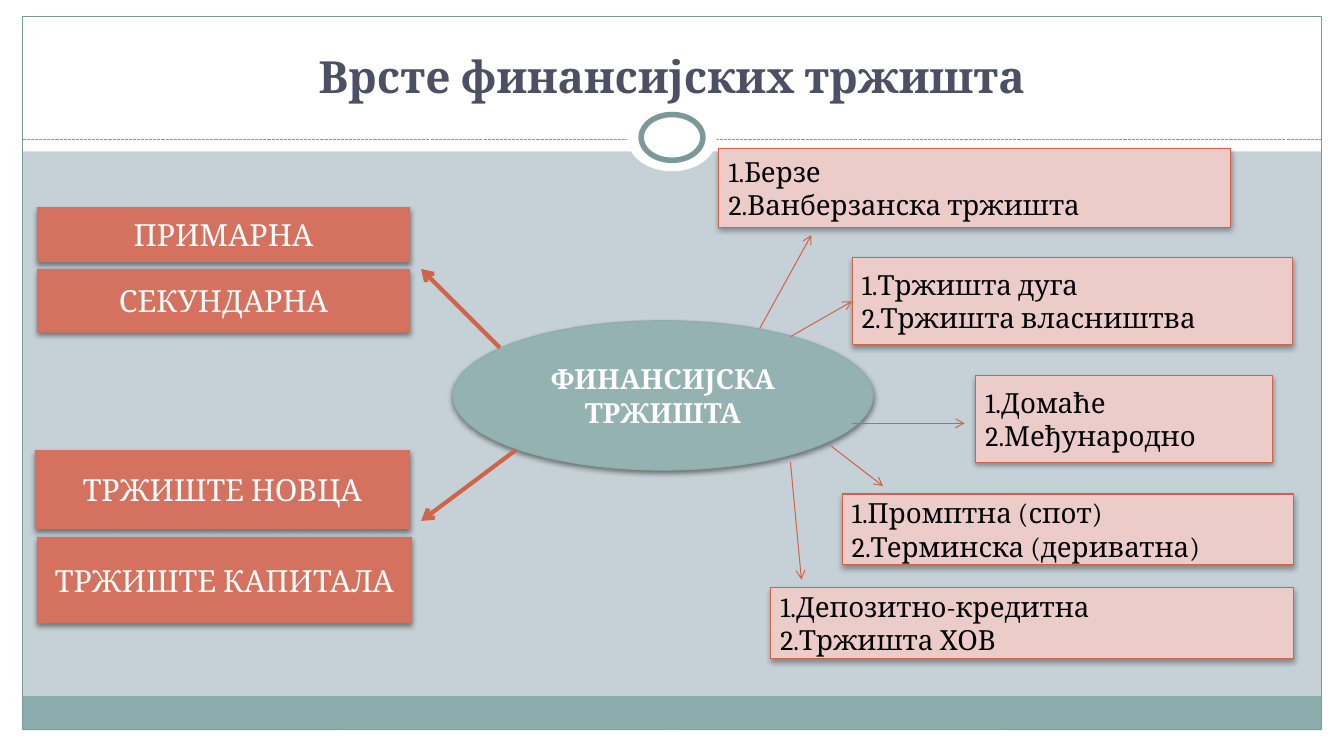
from lxml import etree
from pptx import Presentation
from pptx.dml.color import RGBColor
from pptx.enum.dml import MSO_LINE
from pptx.enum.shapes import MSO_CONNECTOR, MSO_SHAPE
from pptx.enum.text import MSO_ANCHOR, PP_ALIGN
from pptx.oxml.ns import qn
from pptx.util import Emu, Pt

PX = 9144
WIDTH, HEIGHT = 1350, 750
FONT = "Cambria"
RECTANGLE, OVAL = MSO_SHAPE.RECTANGLE, MSO_SHAPE.OVAL
STRAIGHT = MSO_CONNECTOR.STRAIGHT
SYSTEM_DASH = MSO_LINE.SQUARE_DOT
MIDDLE, BOTTOM = MSO_ANCHOR.MIDDLE, MSO_ANCHOR.BOTTOM
LEFT, CENTER = PP_ALIGN.LEFT, PP_ALIGN.CENTER
LEFT_SIDE = 1

BACKGROUND = RGBColor(0xC5, 0xD1, 0xD7)
WHITE = RGBColor(0xFF, 0xFF, 0xFF)
BLACK = RGBColor(0x00, 0x00, 0x00)
FOOTER = RGBColor(0x8C, 0xAD, 0xAE)
FRAME = RGBColor(0x7C, 0x99, 0x9A)
TITLE = RGBColor(0x4B, 0x50, 0x64)
TEAL = RGBColor(0x95, 0xB2, 0xB3)
CORAL = RGBColor(0xD4, 0x72, 0x5F)
PINK = RGBColor(0xEC, 0xCC, 0xC9)
ORANGE = RGBColor(0xD1, 0x63, 0x49)

TITLE_BOX = (45, 25, 1260, 83)
CENTER_BOX = (455, 322, 422, 150)
CATEGORIES = [
    ("ПРИМАРНА", (37, 208, 375, 55)),
    ("СЕКУНДАРНА", (37, 270, 375, 64)),
    ("ТРЖИШТЕ НОВЦА", (35, 452, 377, 79)),
    ("ТРЖИШТЕ КАПИТАЛА", (37, 539, 377, 87)),
]
LISTS = [
    ("Берзе\nВанберзанска тржишта", (722, 149, 514, 79)),
    ("Тржишта дуга\nТржишта власништва", (856, 259, 442, 87)),
    ("Домаће\nМеђународно", (980, 377, 298, 87)),
    ("Промптна (спот)\nТерминска (дериватна)", (846, 496, 453, 71)),
    ("Депозитно-кредитна\nТржишта ХОВ", (774, 590, 525, 71)),
]
CATEGORY_ARROWS = [(502, 349, 423, 270), (518, 452, 423, 523)]
LIST_ARROWS = [
    (763, 330, 815, 236),
    (794, 338, 856, 303),
    (856, 425, 969, 425),
    (835, 448, 887, 488),
    (794, 464, 805, 582),
]


def scale(lengths):
    return [Emu(length * PX) for length in lengths]


def add_block(slide, kind, box, fill=None, line=None, weight=0.75, shadow=0):
    shape = slide.shapes.add_shape(kind, *scale(box))
    if fill is None:
        shape.fill.background()
    else:
        shape.fill.solid()
        shape.fill.fore_color.rgb = fill
    if line is None:
        shape.line.fill.background()
    else:
        shape.line.color.rgb = line
        shape.line.width = Pt(weight)
    shape.shadow.inherit = False
    if shadow:
        effects = shape.element.spPr.find(qn("a:effectLst"))
        outer = etree.SubElement(
            effects, qn("a:outerShdw"), blurRad=str(Pt(4)), dist=str(Pt(2)),
            dir="5400000", rotWithShape="0")
        color = etree.SubElement(outer, qn("a:srgbClr"), val="000000")
        etree.SubElement(color, qn("a:alpha"), val=str(shadow * 1000))
    return shape


def write_text(shape, text, size, color, bold=False, align=CENTER, anchor=MIDDLE):
    frame = shape.text_frame
    frame.text = text
    frame.word_wrap = True
    frame.vertical_anchor = anchor
    for paragraph in frame.paragraphs:
        paragraph.alignment = align
        font = paragraph.runs[0].font
        font.name = FONT
        font.size = Pt(size)
        font.bold = bold
        font.color.rgb = color


def add_line(slide, ends, color, weight=0.75, arrow=False):
    line = slide.shapes.add_connector(STRAIGHT, *scale(ends))
    line.line.color.rgb = color
    line.line.width = Pt(weight)
    if arrow:
        etree.SubElement(line.get_or_add_ln(), qn("a:tailEnd"), type="arrow")
    etree.SubElement(line.element.spPr, qn("a:effectLst"))
    return line


def draw_frame(slide, box):
    left, top, width, height = box
    slide.background.fill.solid()
    slide.background.fill.fore_color.rgb = BACKGROUND
    margins = [
        (left, top + height - 17, width, 17),
        (left, top, width, 152),
        (left, top, 23, height),
        (left + width - 23, top, 23, height),
    ]
    for margin in margins:
        add_block(slide, RECTANGLE, margin, WHITE)
    inner = width - 46
    add_block(slide, RECTANGLE, (left + 23, top + 699, inner, 34), FOOTER)
    add_block(slide, RECTANGLE, (left + 23, top + 17, inner, height - 34), line=FRAME)
    divider = add_line(slide, (left + 23, top + 140, left + 23 + inner, top + 140), FRAME)
    divider.line.dash_style = SYSTEM_DASH
    middle = left + width // 2
    add_block(slide, OVAL, (middle - 45, top + 105, 90, 67), WHITE)
    add_block(slide, OVAL, (middle - 31, top + 115, 62, 46), WHITE, FRAME, 4)


def draw_title(slide, box):
    title = slide.shapes.title
    title.left, title.top, title.width, title.height = scale(box)
    write_text(title, "Врсте финансијских тржишта", 32, TITLE, True, anchor=BOTTOM)
    title.element.getparent().append(title.element)


def draw_center(slide, box):
    ellipse = add_block(slide, OVAL, box, TEAL, FOOTER, shadow=45)
    write_text(ellipse, "ФИНАНСИЈСКА ТРЖИШТА", 20, WHITE, True)
    ellipse.text_frame.margin_left = ellipse.text_frame.margin_right = 0


def draw_category(slide, text, box):
    category = add_block(slide, RECTANGLE, box, CORAL, shadow=45)
    write_text(category, text, 22, WHITE)


def draw_list(slide, text, box):
    shape = add_block(slide, RECTANGLE, box, PINK, ORANGE, shadow=35)
    write_text(shape, text, 20, BLACK, align=LEFT)
    shape.text_frame.margin_right = 0
    indent = 13 * PX
    for paragraph in shape.text_frame.paragraphs:
        properties = paragraph._p.get_or_add_pPr()
        properties.set("marL", str(indent))
        properties.set("indent", str(-indent))
        etree.SubElement(properties, qn("a:buAutoNum"), type="arabicPeriod")
    return shape


def main():
    presentation = Presentation()
    presentation.slide_width, presentation.slide_height = scale((WIDTH, HEIGHT))
    slide = presentation.slides.add_slide(presentation.slide_layouts[5])
    draw_frame(slide, (0, 0, WIDTH, HEIGHT))
    draw_title(slide, TITLE_BOX)
    draw_center(slide, CENTER_BOX)
    for text, box in CATEGORIES:
        draw_category(slide, text, box)
    for ends in CATEGORY_ARROWS:
        add_line(slide, ends, ORANGE, 3, arrow=True)
    lists = [draw_list(slide, text, box) for text, box in LISTS]
    arrows = [add_line(slide, ends, ORANGE, arrow=True) for ends in LIST_ARROWS]
    arrows[1].end_connect(lists[1], LEFT_SIDE)
    presentation.save("out.pptx")


if __name__ == "__main__":
    main()
